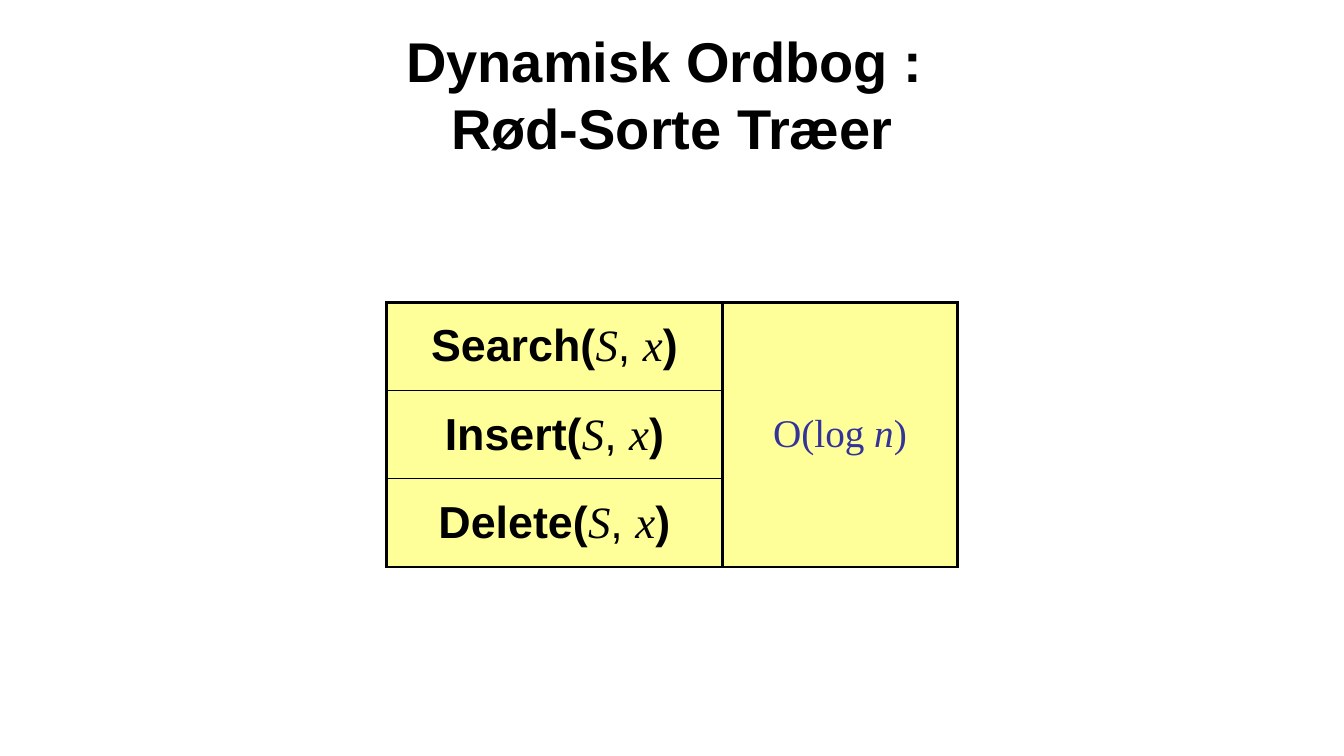
import pptx
import pptx.dml.color
import pptx.enum.text
import pptx.oxml
import pptx.oxml.ns
import pptx.util

SANS, SERIF = "Arial", "Times New Roman"
BLACK, YELLOW, INDIGO = "000000", "FFFF99", "333399"
CENTER = pptx.enum.text.PP_ALIGN.CENTER
MIDDLE = pptx.enum.text.MSO_ANCHOR.MIDDLE


def rgb(value):
    return pptx.dml.color.RGBColor.from_string(value)


def add_runs(p, runs, size, color):
    p.alignment = CENTER
    for text, name, bold, italic in runs:
        r = p.add_run()
        r.text = text
        r.font.color.rgb = rgb(color)
        font_format = {"name": name, "size": pptx.util.Pt(size), "bold": bold, "italic": italic}
        for key, value in font_format.items():
            setattr(r.font, key, value)


prs = pptx.Presentation()
prs.slide_width = pptx.util.Inches(13.333)
prs.slide_height = pptx.util.Inches(7.5)
W, H = prs.slide_width, prs.slide_height
s = prs.slides.add_slide(prs.slide_layouts[6])

sp = s.shapes.add_textbox(int(W * 0.05), int(H * 0.04), int(W * 0.9), int(H / 6))
tf = sp.text_frame
tf.word_wrap = True
tf.vertical_anchor = MIDDLE
p = tf.paragraphs[0]
add_runs(p, [("Dynamisk Ordbog : ", SANS, True, False)], 40, BLACK)
p.add_line_break()
add_runs(p, [("Rød-Sorte Træer", SANS, True, False)], 40, BLACK)

operations = ["Search", "Insert", "Delete"]
col_widths = [int(W * 0.25), int(W * 0.175)]
row_height = int(H * 0.35 / len(operations))
last = len(operations) - 1

sp = s.shapes.add_table(
    len(operations), len(col_widths), int(W * 0.2875), int(H * 0.4),
    sum(col_widths), row_height * len(operations),
)
table = sp.table
table.first_row = False
table.horz_banding = False
for column, width in zip(table.columns, col_widths):
    column.width = width
for row in table.rows:
    row.height = row_height

cell_format = {
    "vertical_anchor": MIDDLE,
    "margin_left": pptx.util.Inches(0.1),
    "margin_right": pptx.util.Inches(0.1),
    "margin_top": 0,
    "margin_bottom": 0,
}
for i in range(len(operations)):
    for j in range(len(col_widths)):
        cell = table.cell(i, j)
        for key, value in cell_format.items():
            setattr(cell, key, value)
        borders = {
            "L": 2.25,
            "R": 2.25,
            "T": 2.25 if i == 0 or j == 1 else 1,
            "B": 2.25 if i == last or j == 1 else 1,
        }
        tcPr = cell._tc.get_or_add_tcPr()
        for side, width in borders.items():
            tcPr.append(pptx.oxml.parse_xml(
                f'<a:ln{side} {pptx.oxml.ns.nsdecls("a")} w="{pptx.util.Pt(width)}">'
                f'<a:solidFill><a:srgbClr val="{BLACK}"/></a:solidFill></a:ln{side}>'
            ))
        cell.fill.solid()
        cell.fill.fore_color.rgb = rgb(YELLOW)

table.cell(0, 1).merge(table.cell(last, 1))

for i, operation in enumerate(operations):
    signature = [
        (operation + "(", SANS, True, False),
        ("S", SERIF, False, True),
        (", ", SANS, False, False),
        ("x", SERIF, False, True),
        (")", SANS, True, False),
    ]
    add_runs(table.cell(i, 0).text_frame.paragraphs[0], signature, 32, BLACK)

cost = [
    ("O(log ", SERIF, False, False),
    ("n", SERIF, False, True),
    (")", SERIF, False, False),
]
add_runs(table.cell(0, 1).text_frame.paragraphs[0], cost, 28, INDIGO)

prs.save("out.pptx")
